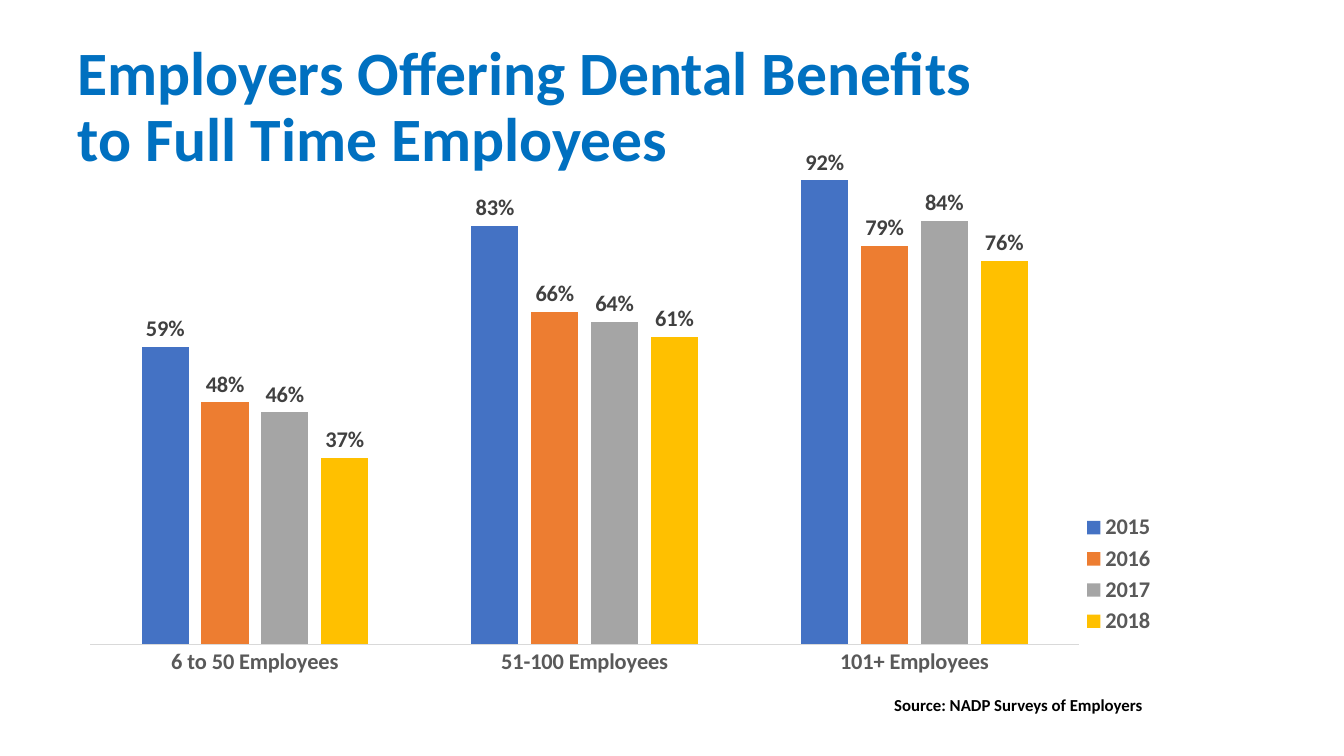
from dataclasses import dataclass

from lxml import etree
from pptx import Presentation
from pptx.chart.data import CategoryChartData
from pptx.dml.color import RGBColor
from pptx.enum.chart import XL_CHART_TYPE, XL_LABEL_POSITION, XL_LEGEND_POSITION, XL_TICK_MARK
from pptx.enum.text import MSO_ANCHOR
from pptx.oxml.ns import qn
from pptx.util import Inches, Pt

COLUMN = XL_CHART_TYPE.COLUMN_CLUSTERED
OUTSIDE = XL_LABEL_POSITION.OUTSIDE_END
RIGHT = XL_LEGEND_POSITION.RIGHT
NO_TICK = XL_TICK_MARK.NONE
TOP, MIDDLE = MSO_ANCHOR.TOP, MSO_ANCHOR.MIDDLE


@dataclass(frozen=True)
class Theme:
    face: str = "Calibri"
    title: str = "0070C0"
    ink: str = "000000"
    axis: str = "595959"
    label: str = "404040"
    rule: str = "D9D9D9"
    head: int = 44
    body: int = 16
    note: int = 12


THEME = Theme()
GROUPS = ["6 to 50 Employees", "51-100 Employees", "101+ Employees"]
YEARS = [
    ("2015", "4472C4", (0.59, 0.83, 0.92)),
    ("2016", "ED7D31", (0.48, 0.66, 0.79)),
    ("2017", "A5A5A5", (0.46, 0.64, 0.84)),
    ("2018", "FFC000", (0.37, 0.61, 0.76)),
]


def set_font(font, size, color):
    font.name, font.size, font.bold = THEME.face, Pt(size), True
    font.color.rgb = RGBColor.from_string(color)


def add_text(slide, box, text, *, size, color, anchor=TOP, wrap=True, lead=1.0):
    frame = slide.shapes.add_textbox(*map(Inches, box)).text_frame
    frame.word_wrap = wrap
    frame.vertical_anchor = anchor
    para = frame.paragraphs[0]
    para.text = text
    para.line_spacing = lead
    for run in para.runs:
        set_font(run.font, size, color)


def set_layout(parent, index, inner, **sizes):
    """Place a chart part by fractions of the chart box."""
    for old in parent.findall(qn("c:layout")):
        parent.remove(old)
    layout = etree.Element(qn("c:layout"))
    parent.insert(index, layout)
    manual = etree.SubElement(layout, qn("c:manualLayout"))
    items = [("layoutTarget", "inner")] if inner else []
    items += [("xMode", "edge"), ("yMode", "edge"), *sizes.items()]
    for name, value in items:
        etree.SubElement(manual, qn(f"c:{name}")).set("val", str(value))


def add_bars(slide, box):
    data = CategoryChartData(number_format="0%")
    data.categories = GROUPS
    for year, _, shares in YEARS:
        data.add_series(year, shares)
    chart = slide.shapes.add_chart(COLUMN, *map(Inches, box), data).chart
    chart.has_title = False
    set_font(chart.font, THEME.body, THEME.axis)

    # Bars and their labels
    plot = chart.plots[0]
    plot.gap_width, plot.overlap = 219, -27
    plot.vary_by_categories = False
    for bars, (_, color, _) in zip(plot.series, YEARS):
        bars.format.fill.solid()
        bars.format.fill.fore_color.rgb = RGBColor.from_string(color)
        labels = bars.data_labels
        labels.show_value = True
        labels.number_format, labels.number_format_is_linked = "0%", False
        labels.position = OUTSIDE
        set_font(labels.font, THEME.body, THEME.label)

    # Axes
    groups = chart.category_axis
    groups.major_tick_mark = groups.minor_tick_mark = NO_TICK
    groups.format.line.width = Pt(0.75)
    groups.format.line.color.rgb = RGBColor.from_string(THEME.rule)
    set_font(groups.tick_labels.font, THEME.body, THEME.axis)
    scale = chart.value_axis
    scale.minimum_scale, scale.maximum_scale = 0, 1
    scale.has_major_gridlines = False
    scale.visible = False

    # Legend
    chart.has_legend = True
    legend = chart.legend
    legend.position = RIGHT
    legend.include_in_layout = False
    set_font(legend.font, THEME.body, THEME.axis)

    # Room for plot and legend
    area = chart.element.find(".//" + qn("c:plotArea"))
    set_layout(area, 0, True, x=0.02, y=0.02, w=0.88, h=0.9)
    key = chart.element.find(".//" + qn("c:legend"))
    set_layout(key, 1, False, x=0.9, y=0.68, w=0.07, h=0.23)


def add_page(deck):
    slide = deck.slides.add_slide(deck.slide_layouts[6])
    # Title
    add_text(slide, (0.67, 0.35, 11.5, 1.45),
             "Employers Offering Dental Benefits\vto Full Time Employees",
             size=THEME.head, color=THEME.title, anchor=MIDDLE, lead=0.9)
    # Chart
    add_bars(slide, (0.67, 1.28, 11.15, 5.56))
    # Source line
    add_text(slide, (8.77, 6.84, 2.69, 0.3), "Source: NADP Surveys of Employers",
             size=THEME.note, color=THEME.ink, wrap=False)


def main():
    deck = Presentation()
    deck.slide_width, deck.slide_height = Inches(13.33), Inches(7.5)
    add_page(deck)
    deck.save("out.pptx")


if __name__ == "__main__":
    main()
